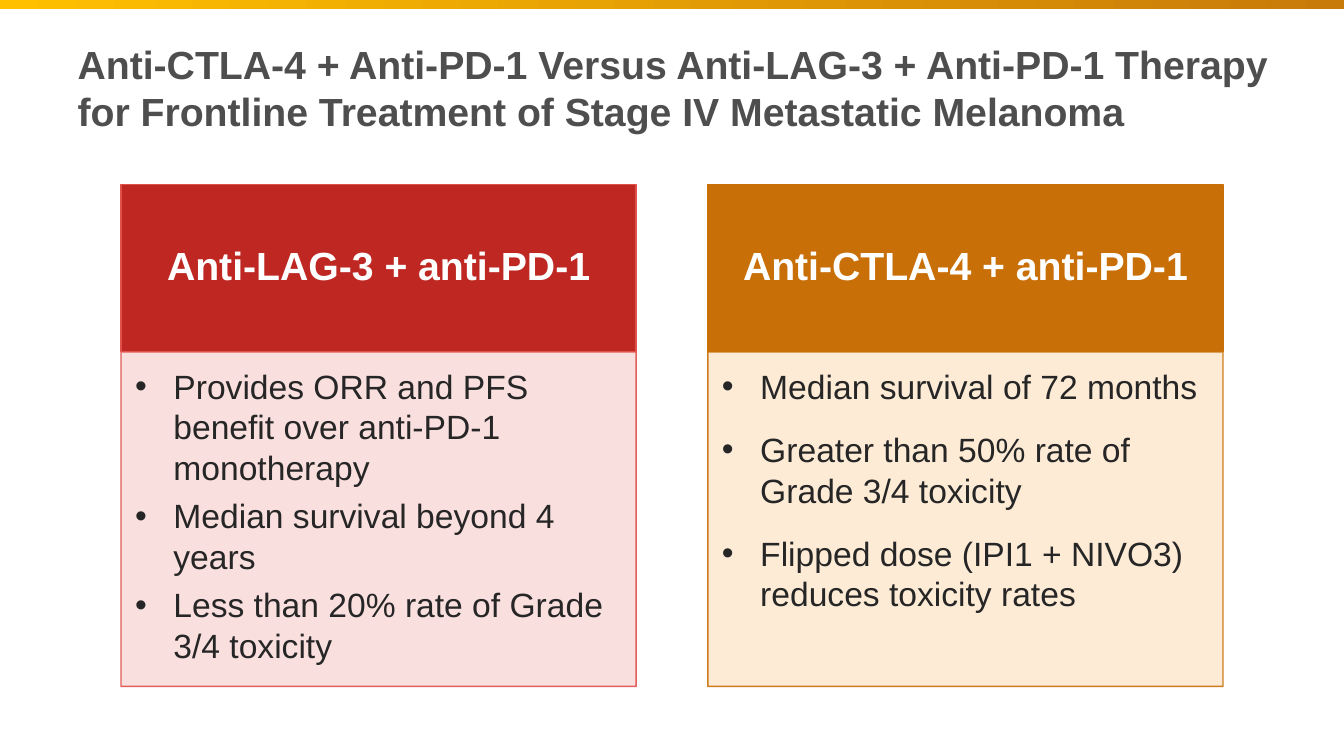
"""Builds a slide comparing two frontline melanoma therapies in two columns."""

from dataclasses import dataclass

from lxml.etree import SubElement
from pptx import Presentation
from pptx.dml.color import RGBColor
from pptx.enum.shapes import MSO_SHAPE
from pptx.enum.text import MSO_ANCHOR, MSO_AUTO_SIZE, PP_ALIGN
from pptx.oxml.ns import qn
from pptx.shapes.autoshape import Shape
from pptx.slide import Slide
from pptx.text.text import TextFrame, _Paragraph
from pptx.util import Inches, Pt


@dataclass(frozen=True)
class Theme:
    font: str = "Arial"
    heading_size: int = 28
    body_size: int = 24
    title_color: str = "4D4E4D"
    heading_color: str = "FFFFFF"
    body_color: str = "262626"
    bar_start: str = "FFC000"
    bar_end: str = "C97B09"
    body_opacity: int = 90


@dataclass(frozen=True)
class Therapy:
    heading: str
    points: tuple[str, ...]
    fill: str
    line: str
    tint: str
    space_after: float


THEME = Theme()
SLIDE_WIDTH, SLIDE_HEIGHT = 13.33, 7.5
COLUMN_LEFT, COLUMN_STEP, COLUMN_WIDTH = 1.2, 5.82, 5.11
HEADING_TOP, HEADING_HEIGHT, BODY_HEIGHT = 1.83, 1.66, 3.32
BULLET_INDENT = 0.38
TITLE = (
    "Anti-CTLA-4 + Anti-PD-1 Versus Anti-LAG-3 + Anti-PD-1 Therapy "
    "for Frontline Treatment of Stage IV Metastatic Melanoma"
)
THERAPIES = (
    Therapy(
        "Anti-LAG-3 + anti-PD-1",
        (
            "Provides ORR and PFS benefit over anti-PD-1 monotherapy",
            "Median survival beyond 4 years",
            "Less than 20% rate of Grade 3/4 toxicity",
        ),
        "BE2722", "DF504B", "F9DCDB", 6,
    ),
    Therapy(
        "Anti-CTLA-4 + anti-PD-1",
        (
            "Median survival of 72 months",
            "Greater than 50% rate of Grade 3/4 toxicity",
            "Flipped dose (IPI1 + NIVO3) reduces toxicity rates",
        ),
        "C96F07", "C96F07", "FDE9D2", 16.3,
    ),
)


def add_span(para: _Paragraph, text: str, size: int, color: str, bold: bool = False) -> None:
    span = para.add_run()
    span.text = text
    span.font.name = THEME.font
    span.font.size = Pt(size)
    span.font.bold = bold
    span.font.color.rgb = RGBColor.from_string(color)


def set_insets(frame: TextFrame, left: float, top: float, right: float, bottom: float) -> None:
    frame.margin_left, frame.margin_top = Inches(left), Inches(top)
    frame.margin_right, frame.margin_bottom = Inches(right), Inches(bottom)


def add_box(page: Slide, left: float, top: float, width: float, height: float) -> Shape:
    box = page.shapes.add_shape(
        MSO_SHAPE.RECTANGLE, Inches(left), Inches(top), Inches(width), Inches(height)
    )
    box.shadow.inherit = False
    box.text_frame.word_wrap = True
    return box


def paint(box: Shape, fill: str, line: str, opacity: int = 100) -> None:
    box.fill.solid()
    box.fill.fore_color.rgb = RGBColor.from_string(fill)
    box.line.color.rgb = RGBColor.from_string(line)
    box.line.width = Pt(1)
    if opacity < 100:
        for color in box._element.spPr.iter(qn("a:srgbClr")):
            SubElement(color, qn("a:alpha"), val=str(opacity * 1000))


def add_bullet(para: _Paragraph) -> None:
    properties = para._p.get_or_add_pPr()
    properties.set("marL", str(Inches(BULLET_INDENT)))
    properties.set("indent", str(-Inches(BULLET_INDENT)))
    SubElement(properties, qn("a:buFont"), typeface=THEME.font)
    SubElement(properties, qn("a:buChar"), char="•")


def add_top_bar(page: Slide) -> None:
    bar = add_box(page, 0, 0, SLIDE_WIDTH, 0.09)
    bar.line.fill.background()
    bar.fill.gradient()
    bar.fill.gradient_angle = 0
    for stop, color in zip(bar.fill.gradient_stops, (THEME.bar_start, THEME.bar_end)):
        stop.color.rgb = RGBColor.from_string(color)


def add_title(page: Slide) -> None:
    title = page.shapes.title
    title.left, title.top = Inches(0.67), Inches(0.22)
    title.width, title.height = Inches(12.11), Inches(1.3)
    frame = title.text_frame
    frame.word_wrap = True
    frame.auto_size = MSO_AUTO_SIZE.NONE
    frame.vertical_anchor = MSO_ANCHOR.MIDDLE
    para = frame.paragraphs[0]
    para.alignment = PP_ALIGN.LEFT
    add_span(para, TITLE, THEME.heading_size, THEME.title_color, bold=True)


def add_heading(page: Slide, therapy: Therapy, left: float) -> None:
    box = add_box(page, left, HEADING_TOP, COLUMN_WIDTH, HEADING_HEIGHT)
    paint(box, therapy.fill, therapy.line)
    frame = box.text_frame
    set_insets(frame, 0.19, 0.11, 0.19, 0.11)
    frame.vertical_anchor = MSO_ANCHOR.MIDDLE
    para = frame.paragraphs[0]
    para.alignment = PP_ALIGN.CENTER
    para.line_spacing = 0.9
    add_span(para, therapy.heading, THEME.heading_size, THEME.heading_color, bold=True)


def add_points(page: Slide, therapy: Therapy, left: float) -> None:
    box = add_box(page, left, HEADING_TOP + HEADING_HEIGHT, COLUMN_WIDTH, BODY_HEIGHT)
    paint(box, therapy.tint, therapy.line, THEME.body_opacity)
    frame = box.text_frame
    set_insets(frame, 0.14, 0.14, 0.19, 0.21)
    frame.vertical_anchor = MSO_ANCHOR.TOP
    for index, point in enumerate(therapy.points):
        para = frame.add_paragraph() if index else frame.paragraphs[0]
        para.alignment = PP_ALIGN.LEFT
        para.space_after = Pt(therapy.space_after)
        add_bullet(para)
        add_span(para, point, THEME.body_size, THEME.body_color)


def main() -> None:
    deck = Presentation()
    deck.slide_width, deck.slide_height = Inches(SLIDE_WIDTH), Inches(SLIDE_HEIGHT)
    page = deck.slides.add_slide(deck.slide_layouts[5])
    add_top_bar(page)
    add_title(page)
    for index, therapy in enumerate(THERAPIES):
        left = COLUMN_LEFT + index * COLUMN_STEP
        add_heading(page, therapy, left)
        add_points(page, therapy, left)
    deck.save("out.pptx")


if __name__ == "__main__":
    main()
